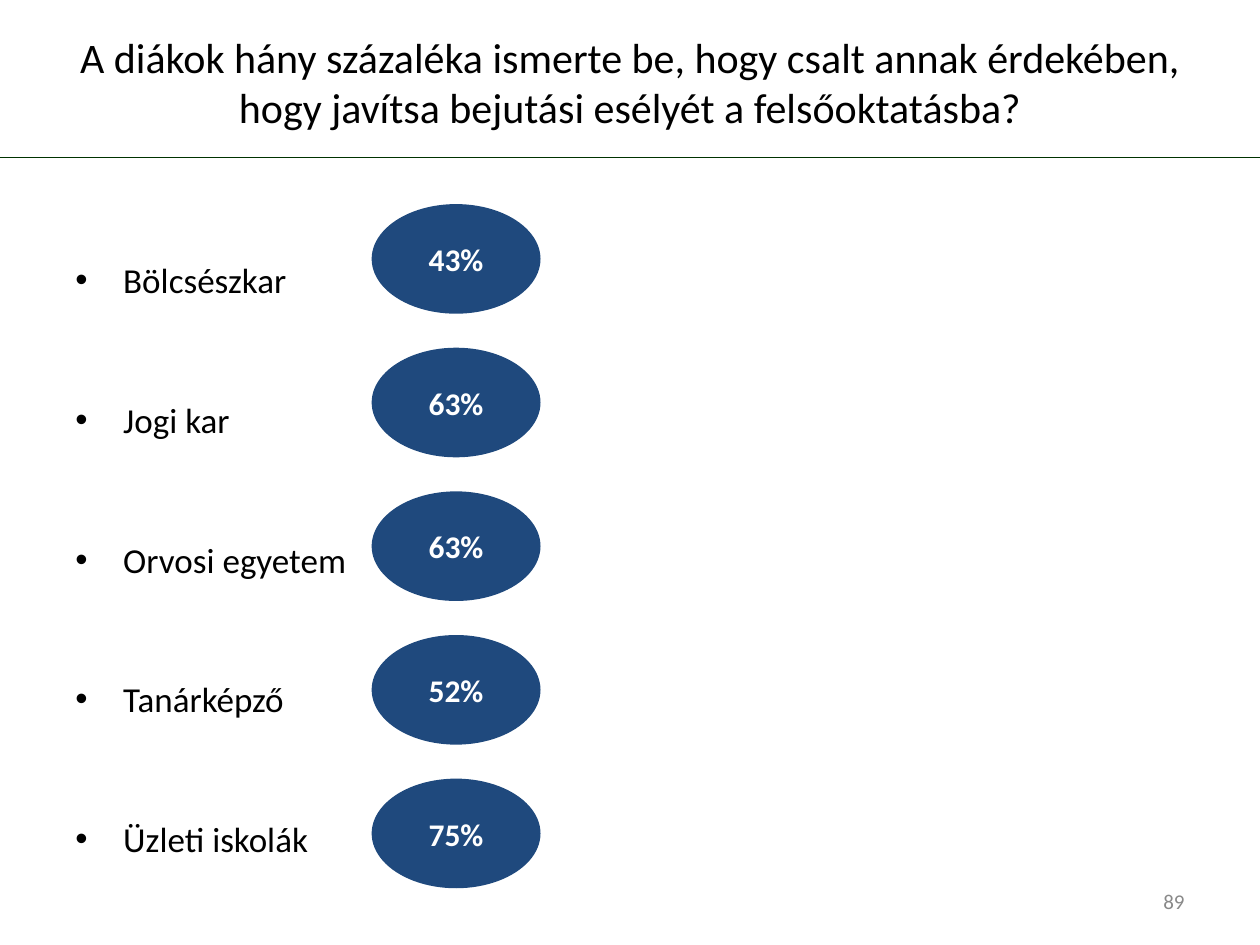
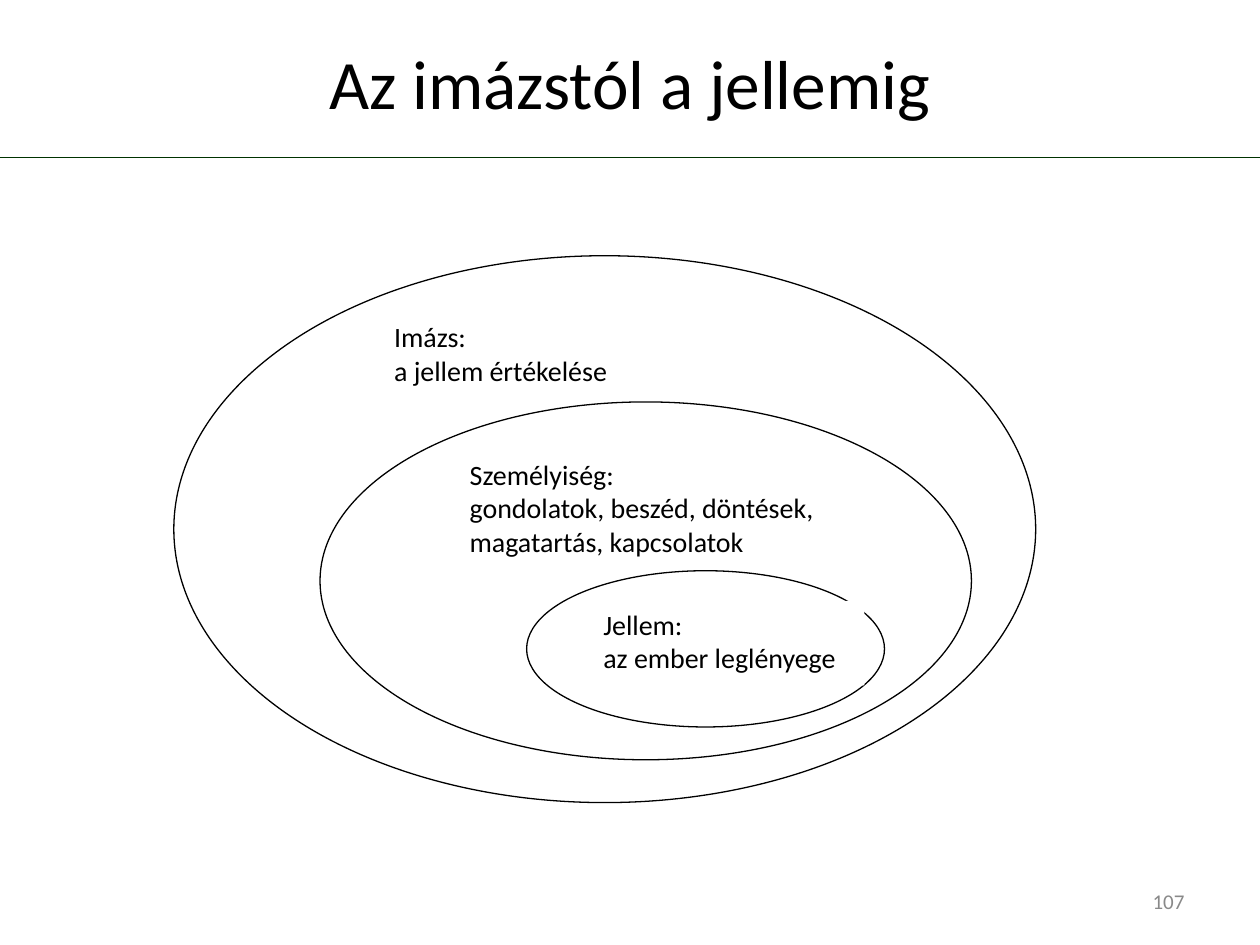
from lxml.etree import SubElement
from pptx import Presentation
from pptx.dml.color import RGBColor
from pptx.enum.shapes import MSO_CONNECTOR, MSO_SHAPE
from pptx.enum.text import MSO_ANCHOR, MSO_AUTO_SIZE, PP_ALIGN
from pptx.oxml.ns import qn
from pptx.util import Inches, Pt

CHEATING = {
    "title": "A diákok hány százaléka ismerte be, hogy csalt annak érdekében, "
             "hogy javítsa bejutási esélyét a felsőoktatásba?",
    "title_size": 24,
    "number": "89",
}
FACULTIES = [
    ("Bölcsészkar", "43%"),
    ("Jogi kar", "63%"),
    ("Orvosi egyetem", "63%"),
    ("Tanárképző", "52%"),
    ("Üzleti iskolák", "75%"),
]
CHARACTER = {"title": "Az imázstól a jellemig", "title_size": 39.6, "number": "107"}
# Outermost first: ellipse box, label box, label
LAYERS = [
    ((1.38, 2.03, 6.84, 4.34), (3.03, 2.49, 2, 0.65), "Imázs:\na jellem értékelése"),
    ((2.54, 3.19, 5.17, 2.84), (3.63, 3.58, 3.13, 0.9),
     "Személyiség:\ngondolatok, beszéd, döntések, magatartás, kapcsolatok"),
    ((4.18, 4.53, 2.84, 1.24), (4.69, 4.77, 2.17, 0.67), "Jellem:\naz ember leglényege"),
]

FONT = "Calibri"
BLACK = RGBColor(0x00, 0x00, 0x00)
WHITE = RGBColor(0xFF, 0xFF, 0xFF)
GREY = RGBColor(0x89, 0x89, 0x89)
GREEN = RGBColor(0x00, 0x33, 0x00)
BLUE = RGBColor(0x1F, 0x49, 0x7D)

OVAL_TOP, OVAL_STEP = 1.62, 1.14


def box(*inches):
    return [Inches(v) for v in inches]


def write(sp, text, size, color=BLACK, align=PP_ALIGN.LEFT, anchor=MSO_ANCHOR.TOP, bold=False):
    tf = sp.text_frame
    tf.word_wrap = True
    tf.auto_size = MSO_AUTO_SIZE.NONE
    tf.vertical_anchor = anchor
    tf.text = text
    for p in tf.paragraphs:
        p.alignment = align
        for r in p.runs:
            r.font.name, r.font.size, r.font.bold = FONT, Pt(size), bold
            r.font.color.rgb = color
    return tf


def add_filled(s, kind, place, fill, line=None):
    sp = s.shapes.add_shape(kind, *box(*place))
    sp.shadow.inherit = False
    sp.fill.solid()
    sp.fill.fore_color.rgb = fill
    if line is None:
        sp.line.fill.background()
    else:
        sp.line.color.rgb = line
        sp.line.width = Pt(0.75)
    return sp


def add_slide(prs, content):
    """Add a slide with the shared title, rule and page number."""
    s = prs.slides.add_slide(prs.slide_layouts[5])
    rule = s.shapes.add_connector(MSO_CONNECTOR.STRAIGHT, *box(0, 1.25, 10, 1.25))
    rule.line.color.rgb = GREEN
    rule.line.width = Pt(1)
    SubElement(rule._element.spPr, qn("a:effectLst"))

    title = s.shapes.title
    title.left, title.top, title.width, title.height = box(0.5, 0.3, 9, 0.7)
    write(title, content["title"], content["title_size"],
          align=PP_ALIGN.CENTER, anchor=MSO_ANCHOR.MIDDLE)
    number = s.shapes.add_textbox(*box(7.17, 6.95, 2.33, 0.4))
    write(number, content["number"], 12, GREY, PP_ALIGN.RIGHT, MSO_ANCHOR.MIDDLE)
    return s


def add_bullet(p):
    pPr = p._p.get_or_add_pPr()
    pPr.set("marL", str(Inches(0.38)))
    pPr.set("indent", str(-Inches(0.38)))
    SubElement(pPr, qn("a:buFont"), typeface="Arial")
    SubElement(pPr, qn("a:buChar"), char="•")


def build_cheating(prs):
    s = add_slide(prs, CHEATING)
    names = s.shapes.add_textbox(*box(0.5, 1.27, 9, 6.23))
    tf = write(names, "\n".join(name for name, _ in FACULTIES), 20)
    for p in tf.paragraphs:
        p.line_spacing = 3.2
        p.space_before = Pt(3)
        add_bullet(p)
    for i, (_, share) in enumerate(FACULTIES):
        oval = add_filled(s, MSO_SHAPE.OVAL, (2.95, OVAL_TOP + i * OVAL_STEP, 1.34, 0.87), BLUE)
        write(oval, share, 18, WHITE, PP_ALIGN.CENTER, MSO_ANCHOR.MIDDLE, bold=True)


def build_character(prs):
    s = add_slide(prs, CHARACTER)
    for oval, _, _ in LAYERS:
        add_filled(s, MSO_SHAPE.OVAL, oval, WHITE, BLACK)
    for _, place, text in reversed(LAYERS):
        write(add_filled(s, MSO_SHAPE.RECTANGLE, place, WHITE), text, 16)


def main():
    prs = Presentation()
    prs.slide_width, prs.slide_height = box(10, 7.5)
    build_cheating(prs)
    build_character(prs)
    prs.save("out.pptx")


if __name__ == "__main__":
    main()
